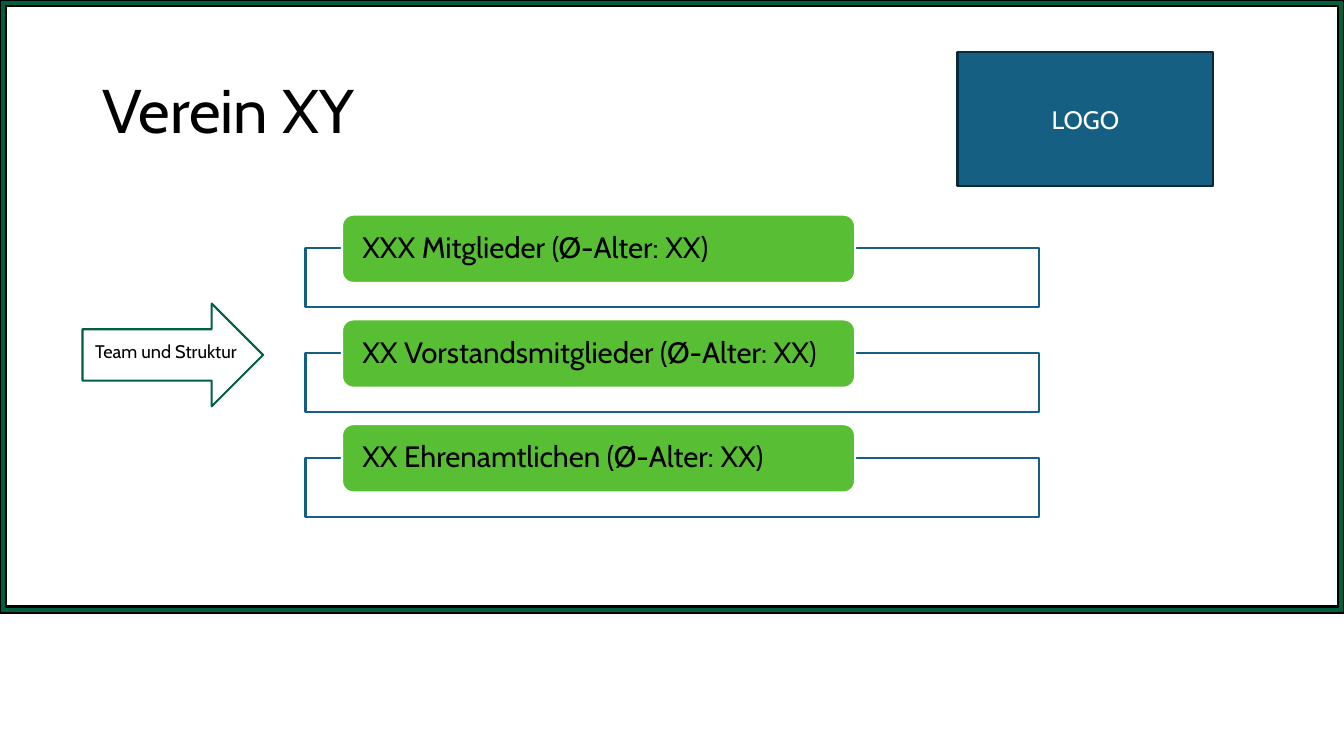
from pptx import Presentation
from pptx.dml.color import RGBColor
from pptx.enum.shapes import MSO_SHAPE
from pptx.enum.text import MSO_ANCHOR, PP_ALIGN
from pptx.util import Cm, Pt

COLORS = {
    "black": "000000",
    "white": "FFFFFF",
    "forest": "005F40",
    "green": "58BE34",
    "blue": "156082",
    "navy": "092A39",
}
FONT = "Cabin"
ROWS = [
    "XXX Mitglieder (Ø-Alter: XX)",
    "XX Vorstandsmitglieder (Ø-Alter: XX)",
    "XX Ehrenamtlichen (Ø-Alter: XX)",
]
TOP, PITCH = 5.41, 2.64  # first label and row distance, in cm


def color(name):
    return RGBColor.from_string(COLORS[name])


def write(shape, text, size=18, ink="black", align=PP_ALIGN.CENTER,
          pad=(0.25, 0.13, 0.25, 0.13), wrap=True, spacing=None):
    frame = shape.text_frame
    frame.word_wrap = wrap
    frame.vertical_anchor = MSO_ANCHOR.MIDDLE
    (frame.margin_left, frame.margin_top,
     frame.margin_right, frame.margin_bottom) = map(Cm, pad)
    frame.text = text
    para = frame.paragraphs[0]
    para.alignment = align
    para.line_spacing = spacing
    para.font.name = FONT
    para.font.size = Pt(size)
    para.font.color.rgb = color(ink)


class Deck:
    def __init__(self):
        self.prs = Presentation()
        self.prs.slide_width = Cm(33.87)
        self.prs.slide_height = Cm(19.05)
        self.slide = self.prs.slides.add_slide(self.prs.slide_layouts[5])

    def title(self, text, box):
        head = self.slide.shapes.title
        head.left, head.top, head.width, head.height = map(Cm, box)
        write(head, text, size=44, align=PP_ALIGN.LEFT, spacing=0.9)

    def shape(self, kind, box, fill, line):
        item = self.slide.shapes.add_shape(kind, *map(Cm, box))
        item.shadow.inherit = False
        item.fill.solid()
        item.fill.fore_color.rgb = color(fill)
        item.line.color.rgb = color(line)
        item.line.width = Pt(1.5)
        return item

    def row(self, text, top):
        self.shape(MSO_SHAPE.RECTANGLE, (7.7, top + 0.85, 18.49, 1.48),
                   "white", "blue")
        label = self.shape(MSO_SHAPE.ROUNDED_RECTANGLE,
                           (8.62, top, 12.93, 1.72), "green", "white")
        write(label, text, size=21, align=PP_ALIGN.LEFT,
              pad=(0.43, 0, 0.43, 0), spacing=0.9)

    def save(self):
        self.prs.save("out.pptx")


def main():
    deck = Deck()

    # Border and title
    border = deck.shape(MSO_SHAPE.FRAME, (0, 0, 33.87, 15.44),
                        "forest", "black")
    border.adjustments[0] = 0.01
    deck.title("Verein XY", (2.34, 1.02, 30.12, 3.68))

    # Member rows
    for i, text in enumerate(ROWS):
        deck.row(text, TOP + i * PITCH)

    # Topic arrow
    arrow = deck.shape(MSO_SHAPE.RIGHT_ARROW, (2.08, 7.65, 4.55, 2.59),
                       "white", "forest")
    write(arrow, "Team und Struktur", size=13, pad=(0.3, 0, 0, 0.13),
          wrap=False, spacing=0.9)

    # Logo box
    logo = deck.shape(MSO_SHAPE.RECTANGLE, (24.13, 1.32, 6.45, 3.38),
                      "blue", "navy")
    write(logo, "LOGO", ink="white")

    deck.save()


if __name__ == "__main__":
    main()
